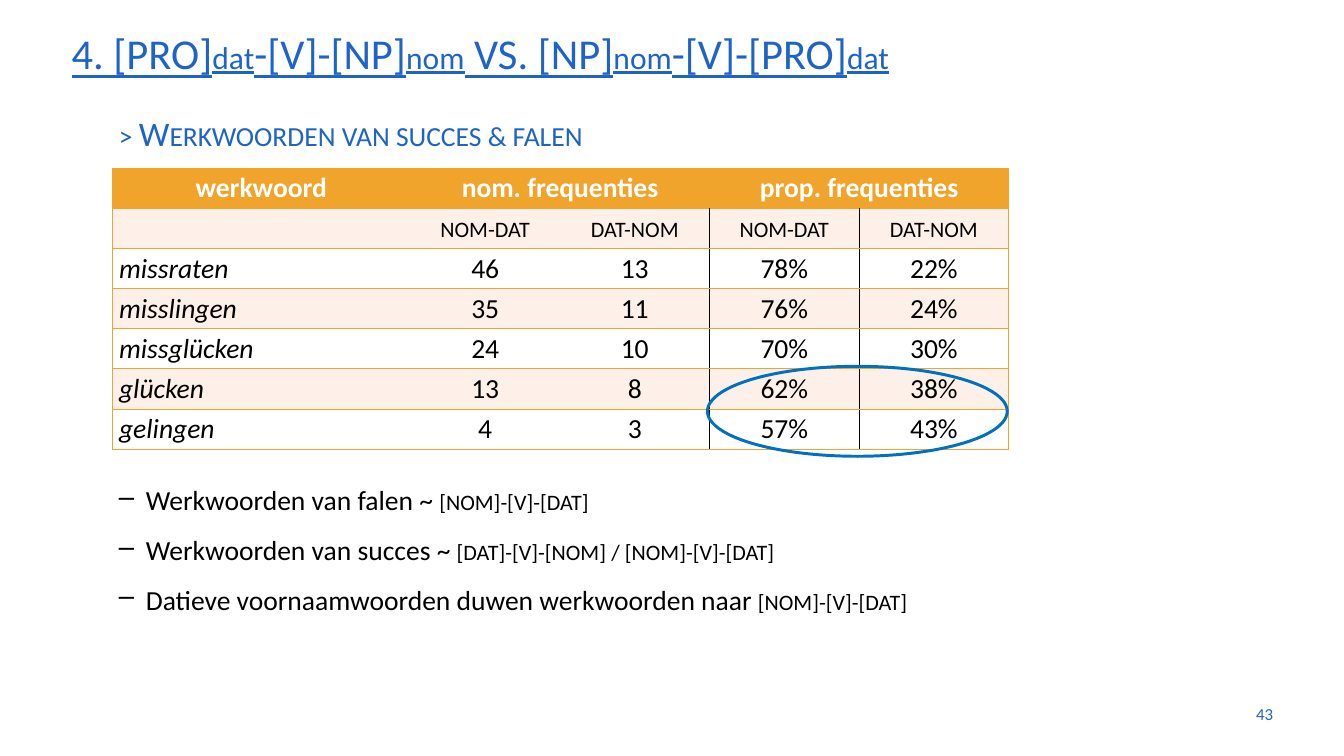
"""Build the slide on verbs of success and failure."""
from dataclasses import dataclass

from lxml import etree
from pptx import Presentation
from pptx.dml.color import RGBColor
from pptx.enum.shapes import MSO_SHAPE
from pptx.enum.text import MSO_ANCHOR, MSO_AUTO_SIZE, PP_ALIGN
from pptx.oxml.ns import qn
from pptx.util import Inches, Pt

LEFT, CENTER, RIGHT = PP_ALIGN.LEFT, PP_ALIGN.CENTER, PP_ALIGN.RIGHT
TOP, MIDDLE = MSO_ANCHOR.TOP, MSO_ANCHOR.MIDDLE
GROW, FIXED = MSO_AUTO_SIZE.SHAPE_TO_FIT_TEXT, MSO_AUTO_SIZE.NONE
OVAL = MSO_SHAPE.OVAL
BLUE, GOLD, CREAM, WHITE, BLACK = "1E64C8", "F1A42B", "FCF0E8", "FFFFFF", "000000"
FACE = "Calibri"


@dataclass
class Bit:
    """A run of text, in small caps or at its own size."""
    text: str
    small: bool = False
    size: float | None = None


@dataclass
class Line:
    """A paragraph of bits with one look."""
    bits: list[Bit]
    size: float
    color: str = BLACK
    align: PP_ALIGN = LEFT
    space: float = 1.0
    bold: bool = False
    italic: bool = False
    under: bool = False
    bullet: str = ""


def paint(hue: str) -> RGBColor:
    """Turn a hex string into a colour."""
    return RGBColor.from_string(hue)


def write(frame, lines: list[Line]) -> None:
    """Fill a text frame with lines."""
    for i, line in enumerate(lines):
        para = frame.paragraphs[0] if i == 0 else frame.add_paragraph()
        para.alignment, para.line_spacing = line.align, line.space
        para.space_before = para.space_after = Pt(0)
        if line.bullet:
            props = para._p.get_or_add_pPr()
            props.set("marL", str(Inches(0.38)))
            props.set("indent", str(Inches(-0.38)))
            etree.SubElement(props, qn("a:buChar"), char=line.bullet)
        font = para.font
        font.name, font.size = FACE, Pt(line.size)
        font.color.rgb = paint(line.color)
        font.bold, font.italic, font.underline = line.bold, line.italic, line.under
        for bit in line.bits:
            run = para.add_run()
            run.text = bit.text
            if bit.size:
                run.font.size = Pt(bit.size)
            if bit.small:
                run._r.get_or_add_rPr().set("cap", "small")


def place(shape, left: float, top: float, width: float, height: float) -> None:
    """Move and size a shape, in inches."""
    shape.left, shape.top = Inches(left), Inches(top)
    shape.width, shape.height = Inches(width), Inches(height)


def add_text(slide, box: tuple[float, ...], lines: list[Line],
             anchor: MSO_ANCHOR = TOP, fit: MSO_AUTO_SIZE = GROW) -> None:
    """Add a wrapping text box."""
    shape = slide.shapes.add_textbox(*map(Inches, box))
    frame = shape.text_frame
    frame.word_wrap, frame.auto_size = True, fit
    frame.vertical_anchor = anchor
    write(frame, lines)


def edge(cell, sides: dict[str, str]) -> None:
    """Draw the named cell borders and clear the others."""
    props = cell._tc.get_or_add_tcPr()
    for side in "LRTB":
        rule = etree.SubElement(props, qn(f"a:ln{side}"), w=str(Pt(1)))
        if side in sides:
            fill = etree.SubElement(rule, qn("a:solidFill"))
            etree.SubElement(fill, qn("a:srgbClr"), val=sides[side])
        else:
            etree.SubElement(rule, qn("a:noFill"))


def borders(row: int, col: int) -> dict[str, str]:
    """Give the border colours of a cell."""
    sides = {"T": GOLD, "B": GOLD}
    if col == 0:
        sides["L"] = GOLD
    if col == 4 or (row == 0 and col == 3):
        sides["R"] = GOLD
    if row and col in (2, 3):
        sides["R"] = BLACK
    if row and col in (3, 4):
        sides["L"] = BLACK
    return sides


def add_grid(slide, rows: list[list[str]]) -> None:
    """Add the table of frequencies."""
    high = 3.97
    frame = slide.shapes.add_table(len(rows), 5, Inches(1.58), Inches(2.37),
                                   Inches(12.64), Inches(high))
    table = frame.table
    for col, width in zip(table.columns, [4.21] + [2.11] * 4):
        col.width = Inches(width)
    for row in table.rows:
        row.height = Inches(high / len(rows))
    for col in (1, 3):
        table.cell(0, col).merge(table.cell(0, col + 1))
    for r, words in enumerate(rows):
        for c, word in enumerate(words):
            cell = table.cell(r, c)
            edge(cell, borders(r, c))
            cell.fill.solid()
            cell.fill.fore_color.rgb = paint(GOLD if r == 0 else CREAM if r % 2 else WHITE)
            verb = r > 1 and c == 0
            bits = [Bit(word, small=r == 1)] if word else []
            write(cell.text_frame, [Line(bits, 28, BLACK if r else WHITE,
                                         LEFT if verb else CENTER,
                                         bold=r == 0, italic=verb)])


def main() -> None:
    """Build and save the slide."""
    deck = Presentation()
    deck.slide_width, deck.slide_height = Inches(18.96), Inches(10.67)
    slide = deck.slides.add_slide(deck.slide_layouts[5])

    title = slide.shapes.title
    place(title, 0.91, 0.28, 17.18, 0.94)
    frame = title.text_frame
    frame.auto_size, frame.vertical_anchor = FIXED, TOP
    words = ["4. [pro]", "dat", "-[v]-[np]", "nom", " vs. [np]", "nom", "-[v]-[pro]", "dat"]
    bits = [Bit(word, i % 2 == 0, 32 if i % 2 else 54) for i, word in enumerate(words)]
    write(frame, [Line(bits, 54, BLUE, space=0.9, under=True)])

    add_text(slide, (17.05, 9.79, 1.01, 0.57),
             [Line([Bit("43")], 17.1, BLUE, RIGHT)], MIDDLE, FIXED)
    add_text(slide, (1.58, 1.42, 9.28, 0.75),
             [Line([Bit("> Werkwoorden van succes & falen", True)], 35, BLUE, space=1.2)])

    add_grid(slide, [
        ["werkwoord", "nom. frequenties", "", "prop. frequenties", ""],
        ["", "nom-dat", "dat-nom", "nom-dat", "dat-nom"],
        ["missraten", "46", "13", "78%", "22%"],
        ["misslingen", "35", "11", "76%", "24%"],
        ["missglücken", "24", "10", "70%", "30%"],
        ["glücken", "13", "8", "62%", "38%"],
        ["gelingen", "4", "3", "57%", "43%"],
    ])

    ring = slide.shapes.add_shape(OVAL, *map(Inches, (9.98, 5.17, 4.23, 1.27)))
    ring.shadow.inherit = False
    ring.fill.background()
    ring.line.color.rgb, ring.line.width = paint("0070C0"), Pt(3)

    points = [
        ("Werkwoorden van falen ~ ", "[nom]-[v]-[dat]"),
        ("Werkwoorden van succes ~ ", "[dat]-[v]-[nom] / [nom]-[v]-[dat]"),
        ("Datieve voornaamwoorden duwen werkwoorden naar ", "[nom]-[v]-[dat]"),
    ]
    add_text(slide, (1.58, 6.54, 12.64, 2.14),
             [Line([Bit(text), Bit(order, True)], 28, space=1.5, bullet="–")
              for text, order in points])

    deck.save("out.pptx")


if __name__ == "__main__":
    main()
